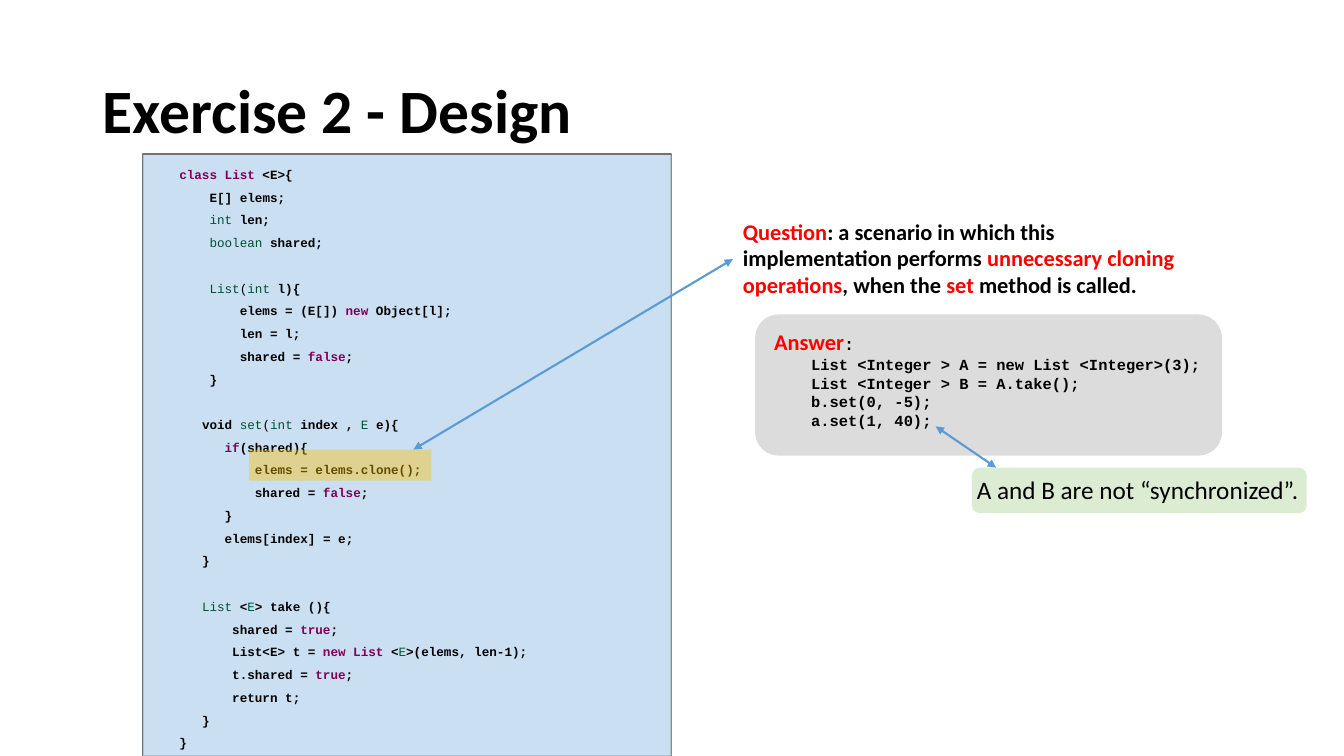
from lxml import etree
from pptx import Presentation
from pptx.dml.color import RGBColor
from pptx.enum.shapes import MSO_CONNECTOR, MSO_SHAPE
from pptx.enum.text import MSO_ANCHOR
from pptx.oxml.ns import qn
from pptx.util import Pt

PX = 9144  # 100 px to the inch
RECT, ROUND = MSO_SHAPE.RECTANGLE, MSO_SHAPE.ROUNDED_RECTANGLE
STRAIGHT = MSO_CONNECTOR.STRAIGHT
TOP, MIDDLE = MSO_ANCHOR.TOP, MSO_ANCHOR.MIDDLE
SANS, MONO = "Calibri", "Courier New"
BLACK, RED, BLUE = "000000", "FF0000", "5B9BD5"
CODE_SIZE, REPLY_SIZE = 9, 11
PITCH = 16.25  # height of a code line, in points

# Styles of runs
HEAD = {"name": SANS, "size": 44, "bold": True, "color": BLACK}
ASK = {"name": SANS, "size": 16, "bold": True, "color": BLACK}
MARK = {**ASK, "color": RED}
NOTE = {"name": SANS, "size": 18, "bold": False, "color": BLACK}
CODE = {"name": MONO, "size": CODE_SIZE, "bold": True, "color": BLACK}
KEY = {**CODE, "color": "7F0055"}
KIND = {**CODE, "bold": False, "color": "005032"}
THIN = {**CODE, "bold": False}
REPLY = {**CODE, "size": REPLY_SIZE}
COLON = {**CODE, "size": 12}

# Blocks of code lines: indent in characters, then runs
BLOCKS = [
    [
        (0, ("class List", KEY), (" <E>{", CODE)),
        (4, ("E[] elems;", CODE)),
        (4, ("int ", KIND), ("len;", CODE)),
        (4, ("boolean", KIND), (" shared;", CODE)),
    ],
    [
        (4, ("List", KIND), ("(", THIN), ("int", KIND), (" l){", CODE)),
        (8, ("elems = (E[]) ", CODE), ("new", KEY), (" Object[l];", CODE)),
        (8, ("len = l;", CODE)),
        (8, ("shared = ", CODE), ("false", KEY), (";", CODE)),
        (4, ("}", CODE)),
    ],
    [
        (3, ("void ", CODE), ("set", KIND), ("(", THIN), ("int", KIND),
         (" index , ", CODE), ("E", KIND), (" e){", CODE)),
        (6, ("if", KEY), ("(shared){", CODE)),
        (10, ("elems = elems.clone();", CODE)),
        (10, ("shared = ", CODE), ("false", KEY), (";", CODE)),
        (6, ("}", CODE)),
        (6, ("elems[index] = e;", CODE)),
        (3, ("}", CODE)),
    ],
    [
        (3, ("List", KIND), (" <", CODE), ("E", KIND), ("> take (){", CODE)),
        (7, ("shared = ", CODE), ("true", KEY), (";", CODE)),
        (7, ("List<E> t = ", CODE), ("new List", KEY), (" <", CODE),
         ("E", KIND), (">(elems, len-1);", CODE)),
        (7, ("t.shared = ", CODE), ("true", KEY), (";", CODE)),
        (7, ("return t;", CODE)),
        (3, ("}", CODE)),
        (0, ("}", CODE)),
    ],
]
TITLE = [(0, ("Exercise 2 - Design", HEAD))]
QUESTION = [(
    0, ("Question", MARK),
    (": a scenario in which this implementation performs ", ASK),
    ("unnecessary cloning operations", MARK), (", when the ", ASK),
    ("set", MARK), (" method is called.", ASK),
)]
ANSWER = [
    (0, ("Answer", MARK), (":", COLON)),
    (4, ("List <Integer > A = new List <Integer>(3);", REPLY)),
    (4, ("List <Integer > B = A.take();", REPLY)),
    (4, ("b.set(0, -5);", REPLY)),
    (4, ("a.set(1, 40);", REPLY)),
]
REMARK = [(0, ("A and B are not “synchronized”.", NOTE))]


def rgb(code):
    return RGBColor.from_string(code)


def box(place, form, fill=None, alpha=100, edge=None):
    """Add a preset shape; alpha is its opacity in percent."""
    shape = slide.shapes.add_shape(form, *(v * PX for v in place))
    shape.shadow.inherit = False
    if fill:
        shape.fill.solid()
        shape.fill.fore_color.rgb = rgb(fill)
        tint = shape.fill._xPr.find(".//" + qn("a:srgbClr"))
        etree.SubElement(tint, qn("a:alpha"), val=str(alpha * 1000))
    else:
        shape.fill.background()
    if edge:
        shape.line.color.rgb = rgb(edge)
        shape.line.width = Pt(1.5)
    else:
        shape.line.fill.background()


def write(place, lines, anchor=TOP, wrap=True, pitch=None, gaps=()):
    """Add a text box; gaps holds the line numbers with a blank line above."""
    frame = slide.shapes.add_textbox(*(v * PX for v in place)).text_frame
    frame.word_wrap = wrap
    frame.vertical_anchor = anchor
    for num, (indent, *runs) in enumerate(lines):
        par = frame.add_paragraph() if num else frame.paragraphs[0]
        if pitch:
            par.line_spacing = pitch
        if num in gaps:
            par.space_before = pitch
        if indent:
            wide = 0.6 * runs[0][1]["size"]
            par._p.get_or_add_pPr().set("marL", str(Pt(indent * wide)))
        for text, style in runs:
            run = par.add_run()
            run.text = text
            look = {**style, "size": Pt(style["size"])}
            run.font.color.rgb = rgb(look.pop("color"))
            for name, value in look.items():
                setattr(run.font, name, value)


def arrow(*ends):
    """Add a line with a head at both ends."""
    line = slide.shapes.add_connector(STRAIGHT, *(v * PX for v in ends))
    line.line.color.rgb = rgb(BLUE)
    line.line.width = Pt(1.5)
    for tag in ("a:headEnd", "a:tailEnd"):
        etree.SubElement(line.line._get_or_add_ln(), qn(tag), type="triangle")
    etree.SubElement(line._element.spPr, qn("a:effectLst"))


deck = Presentation()
deck.slide_width, deck.slide_height = 1333 * PX, 750 * PX
slide = deck.slides.add_slide(deck.slide_layouts[6])

code, starts = [], []
for block in BLOCKS:
    starts.append(len(code))
    code += block

box((964, 464, 332, 45), ROUND, "C5E0B4", 59)
write((92, 40, 1150, 145), TITLE, anchor=MIDDLE, pitch=0.9)
box((142, 153, 524, 597), RECT, edge="767171")
box((142, 154, 524, 596), RECT, "BDD7EE", 80)
write((168, 153, 499, 601), code, pitch=Pt(PITCH), gaps=starts[1:])
arrow(410, 446, 727, 257)
box((749, 312, 463, 140), ROUND, "BFBFBF", 54)
write((727, 211, 465, 91), QUESTION)
write((758, 321, 538, 111), ANSWER)
arrow(988, 464, 928, 423)
write((959, 466, 345, 40), REMARK, wrap=False)
box((247, 446, 181, 31), RECT, "FFC000", 40)

deck.save("out.pptx")
